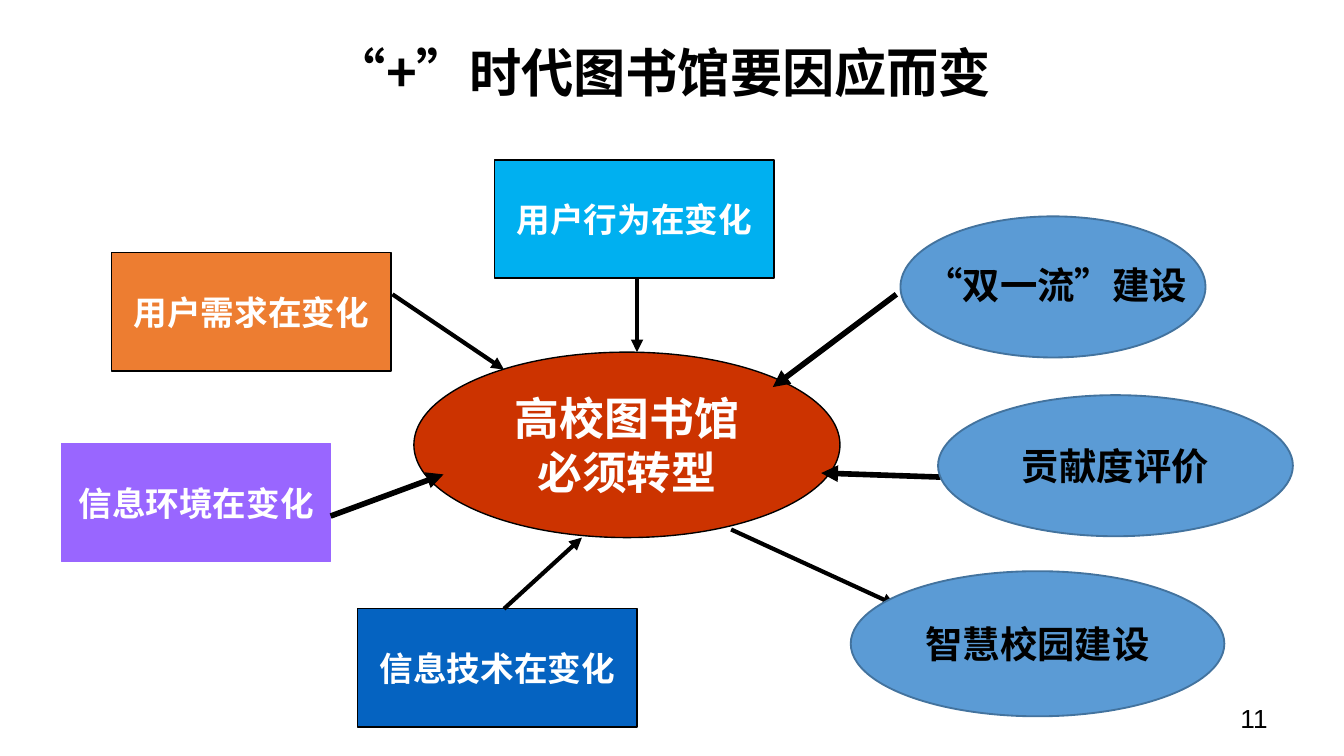
from lxml import etree
from pptx import Presentation
from pptx.dml.color import RGBColor
from pptx.enum.shapes import MSO_CONNECTOR, MSO_SHAPE
from pptx.enum.text import MSO_ANCHOR, PP_ALIGN
from pptx.oxml.ns import qn
from pptx.util import Inches, Pt

SLIDE_WIDTH = 10
SLIDE_HEIGHT = SLIDE_WIDTH * 9 / 16
CJK_FONT = "Noto Sans CJK SC"
BLACK, WHITE = "000000", "FFFFFF"

CHANGES = [  # text, left, top, width, fill, outline
    ("信息环境在变化", 0.46, 3.3, 2, "9966FF", "9966FF"),
    ("信息技术在变化", 2.66, 4.53, 2.08, "0563C1", BLACK),
    ("用户需求在变化", 0.83, 1.88, 2.08, "ED7D31", BLACK),
    ("用户行为在变化", 3.68, 1.19, 2.08, "00B0F0", BLACK),
]
GOALS = [  # lines inside the oval, box
    ([], (6.7, 1.61, 2.27, 1.05)),
    (["贡献度评价"], (6.98, 2.94, 2.64, 1.05)),
    (["智慧校园建设"], (6.33, 4.25, 2.78, 1.08)),
]
ARROWS = [  # start, end, width
    ((3.75, 4.53), (4.33, 4), 2.25),
    ((2.46, 3.84), (3.3, 3.53), 3),
    ((2.92, 2.19), (3.75, 2.75), 2.25),
    ((4.74, 2.06), (4.74, 2.62), 2.25),
    ((6.67, 2.19), (5.75, 2.88), 3),
    ((7, 3.55), (6.11, 3.52), 3),
    ((5.44, 3.94), (6.66, 4.5), 2.25),
]


def rgb(color):
    return RGBColor.from_string(color)


def write(frame, lines, size, color=BLACK, bold=True, align=PP_ALIGN.CENTER,
          font="Arial", wrap=False):
    """Fill a text frame with one paragraph per line."""
    frame.word_wrap = wrap
    frame.vertical_anchor = MSO_ANCHOR.MIDDLE
    frame.text = "\n".join(lines)
    for paragraph in frame.paragraphs:
        paragraph.alignment = align
        style = paragraph.font
        style.name, style.size, style.bold = font, Pt(size), bold
        style.color.rgb = rgb(color)
        for run in paragraph.runs:
            east_asian = etree.SubElement(run._r.get_or_add_rPr(), qn("a:ea"))
            east_asian.set("typeface", CJK_FONT)


def add_label(slide, box, text, size, **style):
    frame = slide.shapes.add_textbox(*map(Inches, box)).text_frame
    write(frame, [text], size, **style)
    return frame


def add_node(slide, kind, box, lines, size, color, fill, outline, line_width):
    node = slide.shapes.add_shape(kind, *map(Inches, box))
    node.shadow.inherit = False
    node.fill.solid()
    node.fill.fore_color.rgb = rgb(fill)
    node.line.color.rgb = rgb(outline)
    node.line.width = Pt(line_width)
    if lines:
        write(node.text_frame, lines, size, color)


def add_arrow(slide, start, end, width):
    arrow = slide.shapes.add_connector(
        MSO_CONNECTOR.STRAIGHT, *map(Inches, start + end))
    arrow.line.color.rgb = rgb(BLACK)
    arrow.line.width = Pt(width)
    properties = arrow._element.spPr
    etree.SubElement(properties.get_or_add_ln(), qn("a:tailEnd"), type="triangle")
    etree.SubElement(properties, qn("a:effectLst"))


def add_title(slide, box):
    frame = add_label(slide, box, "“+”时代图书馆要因应而变", 28,
                      font=CJK_FONT, wrap=True)
    frame.paragraphs[0].line_spacing = 0.9


def add_transformation_map(slide):
    """Changes on the left and goals on the right, around the library."""
    add_node(slide, MSO_SHAPE.OVAL, (3.08, 2.62, 3.17, 1.38),
             ["高校图书馆", "必须转型"], 24, WHITE, "CC3300", BLACK, 0.75)
    for text, left, top, width, fill, outline in CHANGES:
        add_node(slide, MSO_SHAPE.RECTANGLE, (left, top, width, 0.88),
                 [text], 18, WHITE, fill, outline, 0.75)
    for start, end, width in ARROWS:
        add_arrow(slide, start, end, width)
    for lines, box in GOALS:
        add_node(slide, MSO_SHAPE.OVAL, box, lines, 20, BLACK, "5B9BD5", "43739E", 1)
    # This label is wider than the text area of its oval.
    add_label(slide, (6.77, 1.9, 2.18, 0.44), "“双一流”建设", 20)


def main():
    deck = Presentation()
    deck.slide_width, deck.slide_height = Inches(SLIDE_WIDTH), Inches(SLIDE_HEIGHT)
    slide = deck.slides.add_slide(deck.slide_layouts[6])
    add_title(slide, (0.43, 0.26, 9, 0.6))
    add_transformation_map(slide)
    add_label(slide, (7.2, 5.18, 2.33, 0.32), "11", 14, bold=False,
              align=PP_ALIGN.RIGHT, wrap=True)
    deck.save("out.pptx")


if __name__ == "__main__":
    main()
